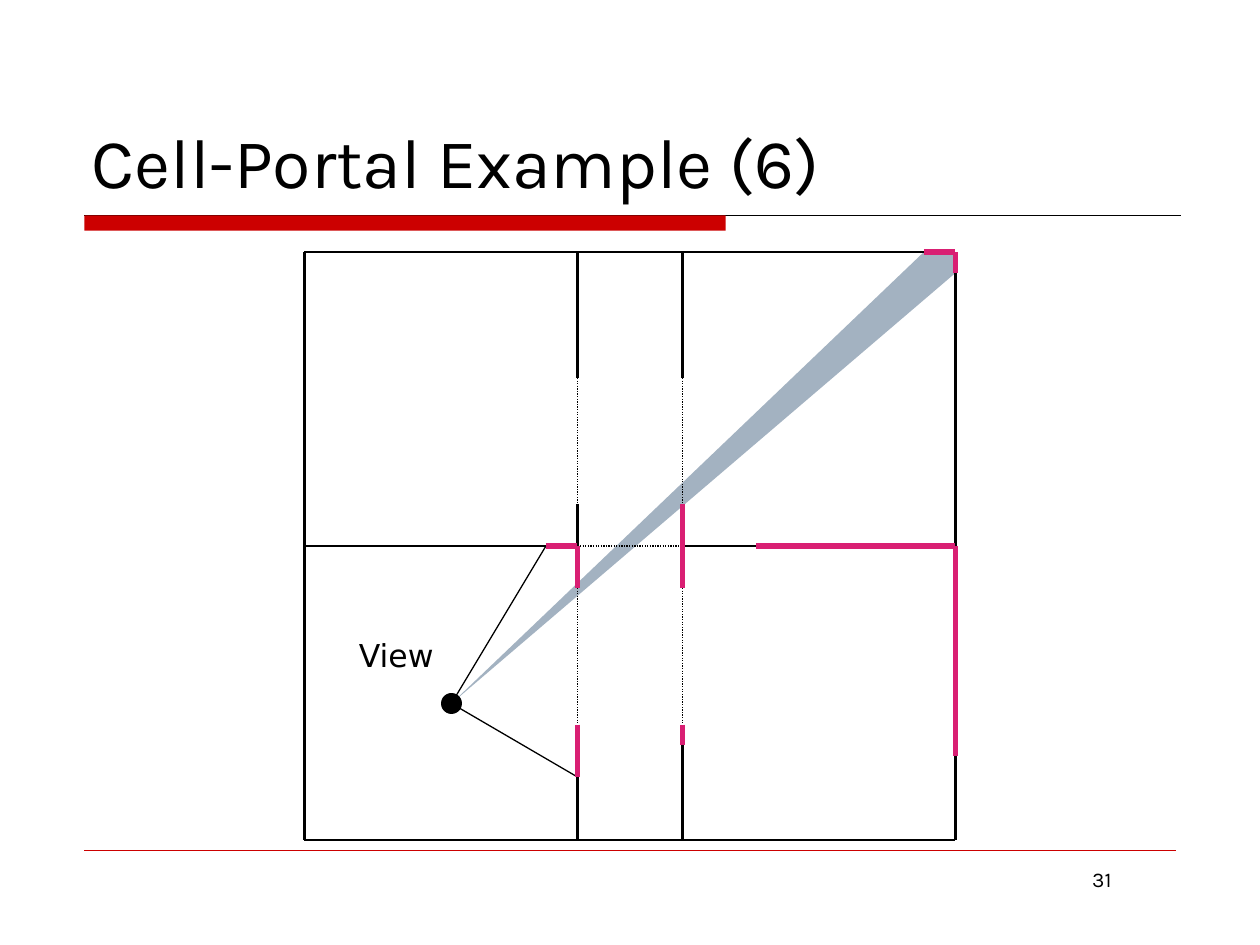
from typing import NamedTuple

import pptx
import pptx.dml.color
import pptx.enum.dml
import pptx.enum.shapes
import pptx.enum.text
import pptx.oxml.ns
import pptx.util

UNIT = 2.54 / 12  # the floor plan sits on a grid of twelve steps to the inch
INCH = 2.54
BLACK, RED, PINK, GREY = "000000", "CC0000", "D91F73", "A3B2C1"
LEFT, DOOR_L, DOOR_R, RIGHT = 29, 55, 65, 91
TOP, MID, BASE = 24, 52, 80
EYE = (43, 67)
SHAPE = pptx.enum.shapes.MSO_SHAPE
ALIGN = pptx.enum.text.PP_ALIGN
ANCHOR = pptx.enum.text.MSO_ANCHOR


class Style(NamedTuple):
    color: str
    width: float
    dotted: bool = False


class Line(NamedTuple):
    x1: float
    y1: float
    x2: float
    y2: float


class Box(NamedTuple):
    x: float
    y: float
    w: float
    h: float


WALL = Style(BLACK, 1.5)
PORTAL = Style(BLACK, 0.75, dotted=True)
SIGHT = Style(BLACK, 0.75)
SEEN = Style(PINK, 3)

PLAN = {
    WALL: [
        Line(LEFT, TOP, LEFT, BASE),
        Line(LEFT, BASE, RIGHT, BASE),
        Line(LEFT, TOP, 88, TOP),
        Line(RIGHT, 26, RIGHT, MID),
        Line(RIGHT, 72, RIGHT, BASE),
        Line(LEFT, MID, 52, MID),
        Line(DOOR_R, MID, 72, MID),
        Line(DOOR_L, TOP, DOOR_L, 36),
        Line(DOOR_L, 48, DOOR_L, MID),
        Line(DOOR_L, 74, DOOR_L, BASE),
        Line(DOOR_R, TOP, DOOR_R, 36),
        Line(DOOR_R, 71, DOOR_R, BASE),
    ],
    PORTAL: [
        Line(DOOR_L, MID, DOOR_R, MID),
        *(Line(x, y1, x, y2) for x in (DOOR_L, DOOR_R)
          for y1, y2 in ((36, 48), (56, 69))),
    ],
    SIGHT: [Line(*EYE, DOOR_L, 74), Line(*EYE, 52, MID)],
    SEEN: [
        Line(52, MID, DOOR_L, MID),
        Line(DOOR_L, MID, DOOR_L, 56),
        Line(DOOR_L, 69, DOOR_L, 74),
        Line(DOOR_R, 48, DOOR_R, MID),
        Line(DOOR_R, MID, DOOR_R, 56),
        Line(DOOR_R, 69, DOOR_R, 71),
        Line(72, MID, RIGHT, MID),
        Line(RIGHT, MID, RIGHT, 72),
        Line(RIGHT, TOP, RIGHT, 26),
        Line(88, TOP, RIGHT, TOP),
    ],
}
BEAM = [EYE, (88, TOP), (RIGHT, TOP), (RIGHT, 26)]


def scale(nums, unit: float) -> list:
    return [pptx.util.Cm(n * unit) for n in nums]


def paint(target, color: str) -> None:
    """Give a fill a solid colour."""
    target.solid()
    target.fore_color.rgb = pptx.dml.color.RGBColor.from_string(color)


def draw_line(slide, line: Line, style: Style, unit: float = UNIT) -> None:
    kind = pptx.enum.shapes.MSO_CONNECTOR.STRAIGHT
    shape = slide.shapes.add_connector(kind, *scale(line, unit))
    paint(shape.line.fill, style.color)
    shape.line.width = pptx.util.Pt(style.width)
    if style.dotted:
        shape.line.dash_style = pptx.enum.dml.MSO_LINE.ROUND_DOT
    props = shape.element.spPr
    props.append(props.makeelement(pptx.oxml.ns.qn("a:effectLst"), {}))


def fill_shape(shape, color: str) -> None:
    shape.shadow.inherit = False
    paint(shape.fill, color)
    shape.line.fill.background()


def draw_box(slide, kind, box: Box, color: str, unit: float) -> None:
    fill_shape(slide.shapes.add_shape(kind, *scale(box, unit)), color)


def draw_beam(slide, points: list) -> None:
    first, *rest = [scale(p, UNIT) for p in points]
    build = slide.shapes.build_freeform(*first)
    build.add_line_segments(rest, close=True)
    fill_shape(build.convert_to_shape(), GREY)


def write(frame, text: str, size: float, font: str, align=ALIGN.LEFT) -> None:
    para = frame.paragraphs[0]
    para.alignment = align
    run = para.add_run()
    run.text = text
    run.font.size = pptx.util.Pt(size)
    run.font.name = font
    paint(run.font.fill, BLACK)


def add_title(slide, text: str, box: Box) -> None:
    title = slide.shapes.title
    title.left, title.top, title.width, title.height = scale(box, INCH)
    title.text_frame.vertical_anchor = ANCHOR.BOTTOM
    title.text_frame.auto_size = pptx.enum.text.MSO_AUTO_SIZE.NONE
    write(title.text_frame, text, 40, "Karla")


def add_label(slide, text: str, box: Box, size: float, font: str,
              align=ALIGN.LEFT, wrap: bool = True) -> None:
    label = slide.shapes.add_textbox(*scale(box, INCH))
    label.text_frame.word_wrap = wrap
    write(label.text_frame, text, size, font, align)


def main() -> None:
    deck = pptx.Presentation()
    deck.slide_width, deck.slide_height = scale((10, 7.5), INCH)
    slide = deck.slides.add_slide(deck.slide_layouts[5])

    draw_line(slide, Line(0.67, 1.71, 9.37, 1.71), Style(BLACK, 0.75), INCH)
    draw_box(slide, SHAPE.RECTANGLE, Box(0.67, 1.71, 5.09, 0.12), RED, INCH)
    draw_line(slide, Line(0.67, 6.75, 9.33, 6.75), Style(RED, 0.25), INCH)
    add_title(slide, "Cell-Portal Example (6)", Box(0.63, 0.33, 8.75, 1.33))

    draw_beam(slide, BEAM)
    for style, lines in PLAN.items():
        for line in lines:
            draw_line(slide, line, style)
    draw_box(slide, SHAPE.OVAL, Box(EYE[0] - 1, EYE[1] - 1, 2, 2), BLACK, UNIT)
    add_label(slide, "View", Box(2.75, 5, 0.92, 0.5), 18, "DejaVu Sans",
              wrap=False)
    add_label(slide, "31", Box(6.75, 6.83, 2.17, 0.52), 12, "Karla",
              ALIGN.RIGHT)
    deck.save("out.pptx")


if __name__ == "__main__":
    main()
